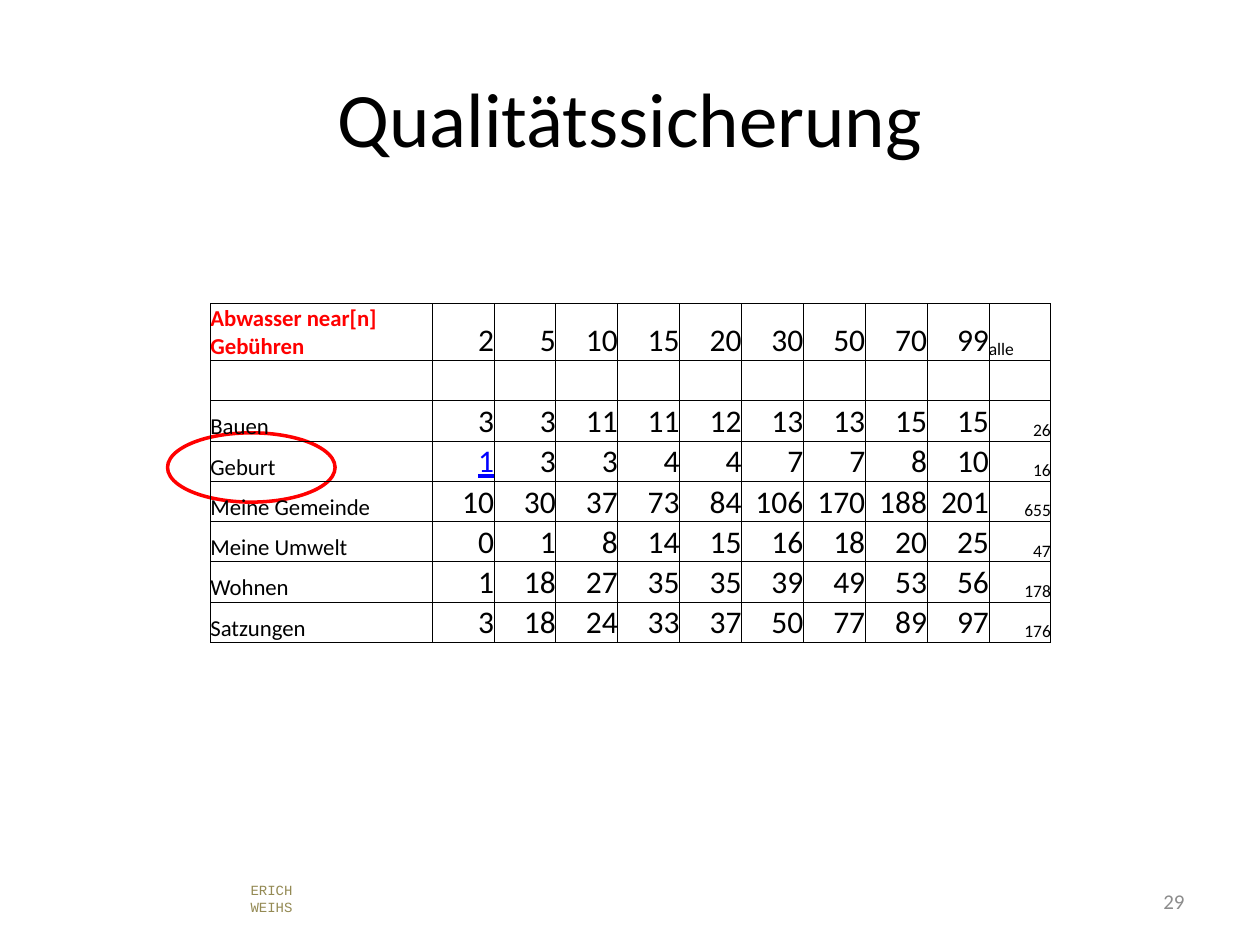
from dataclasses import dataclass, field

from lxml import etree
from pptx import Presentation
from pptx.dml.color import RGBColor
from pptx.enum.shapes import MSO_SHAPE
from pptx.enum.text import MSO_ANCHOR, PP_ALIGN
from pptx.oxml.ns import qn
from pptx.util import Inches, Pt

LEFT, CENTER, RIGHT = PP_ALIGN.LEFT, PP_ALIGN.CENTER, PP_ALIGN.RIGHT
TOP, MIDDLE, BOTTOM = MSO_ANCHOR.TOP, MSO_ANCHOR.MIDDLE, MSO_ANCHOR.BOTTOM
ELLIPSE = MSO_SHAPE.OVAL
WIDTH, HEIGHT = 10, 7.5
BLACK, RED, BLUE, GRAY, OLIVE = "000000", "FF0000", "0000FF", "8C8C8C", "948A54"

TABLE_LEFT, TABLE_TOP = 1.67, 2.41
TABLE_WIDTH, LABEL_WIDTH = 6.67, 1.76
HEADER_HEIGHT, ROW_HEIGHT = 0.45, 0.32
ROWS = [
    ["Abwasser near[n] Gebühren", 2, 5, 10, 15, 20, 30, 50, 70, 99, "alle"],
    [""] * 11,
    ["Bauen", 3, 3, 11, 11, 12, 13, 13, 15, 15, 26],
    ["Geburt", 1, 3, 3, 4, 4, 7, 7, 8, 10, 16],
    ["Meine Gemeinde", 10, 30, 37, 73, 84, 106, 170, 188, 201, 655],
    ["Meine Umwelt", 0, 1, 8, 14, 15, 16, 18, 20, 25, 47],
    ["Wohnen", 1, 18, 27, 35, 35, 39, 49, 53, 56, 178],
    ["Satzungen", 3, 18, 24, 33, 37, 50, 77, 89, 97, 176],
]
LAST_COL = len(ROWS[0]) - 1
MARKED_ROW = 3


@dataclass
class Style:
    size: float
    color: str = BLACK
    align: PP_ALIGN = LEFT
    font: str = "Calibri"
    extras: dict = field(default_factory=dict)


@dataclass
class Label:
    lines: list[str]
    box: tuple[float, float, float, float]
    style: Style
    anchor: MSO_ANCHOR = MIDDLE
    wrap: bool = True


LABELS = [
    Label(["ERICH", "WEIHS"], (1.89, 6.95, 0.54, 0.37),
          Style(8, OLIVE, font="Courier New"), TOP, False),
    Label(["Qualitätssicherung"], (0.5, 0.3, WIDTH - 1, 1.25), Style(44, align=CENTER)),
    Label(["29"], (7.17, 6.95, 2.33, 0.4), Style(12, GRAY, RIGHT)),
]


def rgb(color: str) -> RGBColor:
    return RGBColor.from_string(color)


def write(p, text: str, style: Style) -> None:
    p.alignment = style.align
    r = p.add_run()
    r.text = text
    formats = {"name": style.font, "size": Pt(style.size), **style.extras}
    for name, value in formats.items():
        setattr(r.font, name, value)
    r.font.color.rgb = rgb(style.color)


def add_label(s, label: Label) -> None:
    tf = s.shapes.add_textbox(*map(Inches, label.box)).text_frame
    tf.word_wrap = label.wrap
    tf.vertical_anchor = label.anchor
    for i, line in enumerate(label.lines):
        write(tf.add_paragraph() if i else tf.paragraphs[0], line, label.style)


def add_marker(s) -> None:
    """Ring the label of the marked row, behind the table."""
    w, h = 1.33, 0.55
    middle = TABLE_TOP + HEADER_HEIGHT + (MARKED_ROW - 0.5) * ROW_HEIGHT
    sp = s.shapes.add_shape(
        ELLIPSE, *map(Inches, (TABLE_LEFT - 0.34, middle - h / 2 + 0.05, w, h)))
    sp.shadow.inherit = False
    sp.fill.background()
    sp.line.color.rgb = rgb(RED)
    sp.line.width = Pt(2)


def add_borders(cell, color: str = BLACK, width: float = 0.5) -> None:
    tc_pr = cell._tc.get_or_add_tcPr()
    for i, side in enumerate(("a:lnL", "a:lnR", "a:lnT", "a:lnB")):
        ln = etree.Element(qn(side), w=str(Pt(width)))
        fill = etree.SubElement(ln, qn("a:solidFill"))
        etree.SubElement(fill, qn("a:srgbClr"), val=color)
        tc_pr.insert(i, ln)


def cell_style(row: int, col: int) -> Style:
    if col == 0:
        return Style(13, RED, extras={"bold": True}) if row == 0 else Style(13)
    if col == LAST_COL:
        return Style(10, align=RIGHT if row else LEFT)
    if (row, col) == (MARKED_ROW, 1):
        return Style(18, BLUE, RIGHT, extras={"underline": True})
    return Style(18, align=RIGHT)


def add_counts(s) -> None:
    heights = [HEADER_HEIGHT] + [ROW_HEIGHT] * (len(ROWS) - 1)
    widths = [LABEL_WIDTH] + [(TABLE_WIDTH - LABEL_WIDTH) / LAST_COL] * LAST_COL
    box = (TABLE_LEFT, TABLE_TOP, TABLE_WIDTH, sum(heights))
    table = s.shapes.add_table(len(heights), len(widths), *map(Inches, box)).table
    table.first_row = table.horz_banding = False
    for column, width in zip(table.columns, widths):
        column.width = Inches(width)
    for row, height in zip(table.rows, heights):
        row.height = Inches(height)
    for i, values in enumerate(ROWS):
        for j, value in enumerate(values):
            cell = table.cell(i, j)
            for side in ("left", "right", "top", "bottom"):
                setattr(cell, f"margin_{side}", 0)
            cell.vertical_anchor = BOTTOM
            cell.fill.background()
            add_borders(cell)
            if value != "":
                write(cell.text_frame.paragraphs[0], str(value), cell_style(i, j))


def main() -> None:
    prs = Presentation()
    prs.slide_width, prs.slide_height = Inches(WIDTH), Inches(HEIGHT)
    s = prs.slides.add_slide(prs.slide_layouts[6])
    for label in LABELS:
        add_label(s, label)
    add_marker(s)
    add_counts(s)
    prs.save("out.pptx")


if __name__ == "__main__":
    main()
